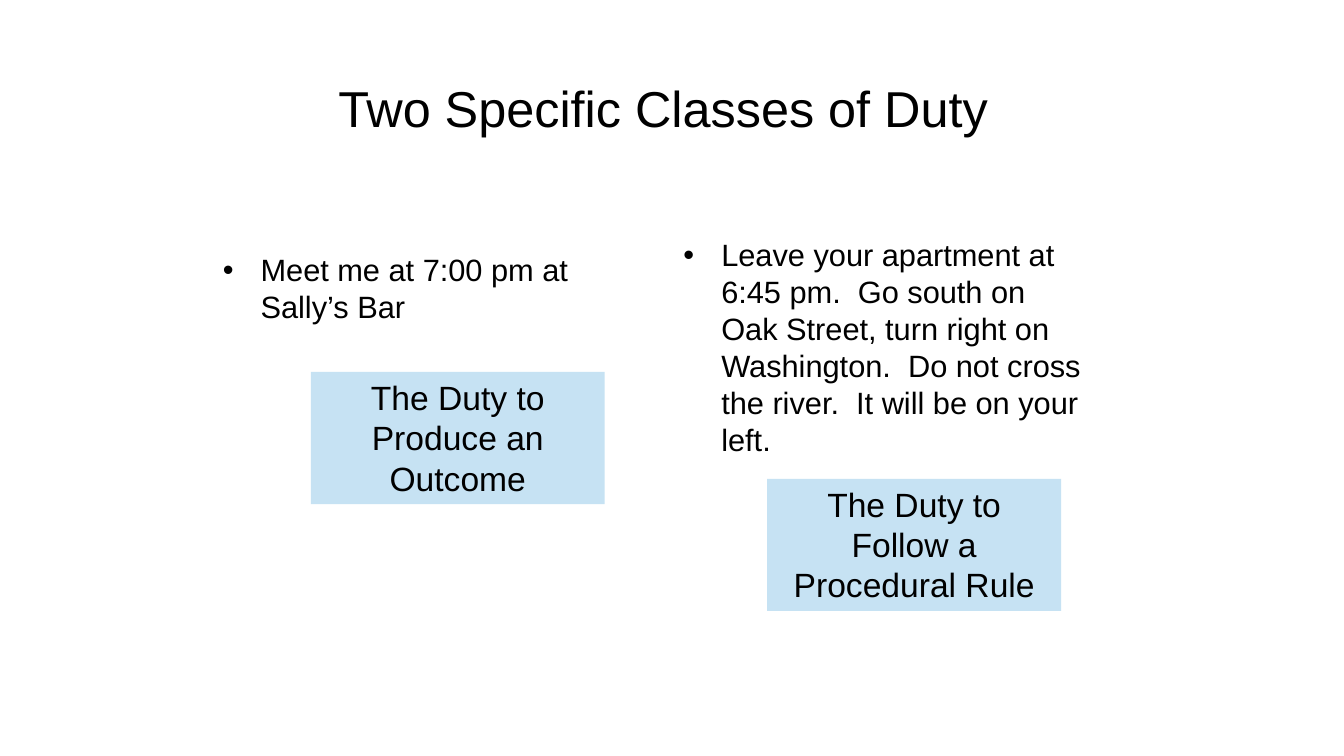
from pptx import Presentation
from pptx.dml.color import RGBColor
from pptx.enum import shapes, text
from pptx.oxml import parse_xml
from pptx.oxml.ns import nsdecls
from pptx.util import Pt

BLACK = RGBColor(0x00, 0x00, 0x00)
PALE_BLUE = RGBColor(0xC6, 0xE2, 0xF3)
FONT = "Arial"
LEADING = 1.2
HANG = 27

# Left, top, width, height in points
TITLE = ("Two Specific Classes of Duty", (164.9, 42.5, 617.8, 67.7))
EXAMPLES = [
    ("Meet me at 7:00 pm at Sally’s Bar", (151.9, 175.7, 302.4, 235.4)),
    ("Leave your apartment at 6:45 pm.  Go south on Oak Street, turn right on "
     "Washington.  Do not cross the river.  It will be on your left.",
     (481, 164.9, 302.4, 178.6)),
]
DUTIES = [
    ("The Duty to Produce an Outcome", (222, 265.7)),
    ("The Duty to Follow a Procedural Rule", (548, 342)),
]
DUTY_SIZE = (210, 94.4)


def place(sp, box):
    sp.left, sp.top, sp.width, sp.height = (Pt(v) for v in box)


def write(sp, words, size, align, anchor, bullet=False):
    tf = sp.text_frame
    tf.word_wrap = True
    tf.auto_size = text.MSO_AUTO_SIZE.NONE
    tf.vertical_anchor = anchor
    tf.margin_left = tf.margin_right = Pt(7.2)
    tf.margin_top = tf.margin_bottom = Pt(3.6)
    p = tf.paragraphs[0]
    p.alignment = align
    p.space_before = Pt(0)
    p.line_spacing = Pt(size * LEADING)
    if bullet:
        pPr = p._p.get_or_add_pPr()
        pPr.set("marL", str(Pt(HANG)))
        pPr.set("indent", str(-Pt(HANG)))
        pPr.append(parse_xml(f'<a:buFont {nsdecls("a")} typeface="{FONT}"/>'))
        pPr.append(parse_xml(f'<a:buChar {nsdecls("a")} char="•"/>'))
    r = p.add_run()
    r.text = words
    r.font.name = FONT
    r.font.size = Pt(size)
    r.font.color.rgb = BLACK


prs = Presentation()
prs.slide_width, prs.slide_height = Pt(960), Pt(540)
s = prs.slides.add_slide(prs.slide_layouts.get_by_name("Two Content"))
title, *bodies = list(s.placeholders)[:3]

words, box = TITLE
place(title, box)
write(title, words, 36, text.PP_ALIGN.CENTER, text.MSO_ANCHOR.MIDDLE)

for body, (words, box) in zip(bodies, EXAMPLES):
    place(body, box)
    write(body, words, 22, text.PP_ALIGN.LEFT, text.MSO_ANCHOR.TOP, bullet=True)

for words, corner in DUTIES:
    sp = s.shapes.add_shape(shapes.MSO_SHAPE.RECTANGLE,
                            *(Pt(v) for v in corner + DUTY_SIZE))
    sp.shadow.inherit = False
    sp.fill.solid()
    sp.fill.fore_color.rgb = PALE_BLUE
    sp.line.fill.background()
    write(sp, words, 24, text.PP_ALIGN.CENTER, text.MSO_ANCHOR.TOP)

prs.save("out.pptx")
